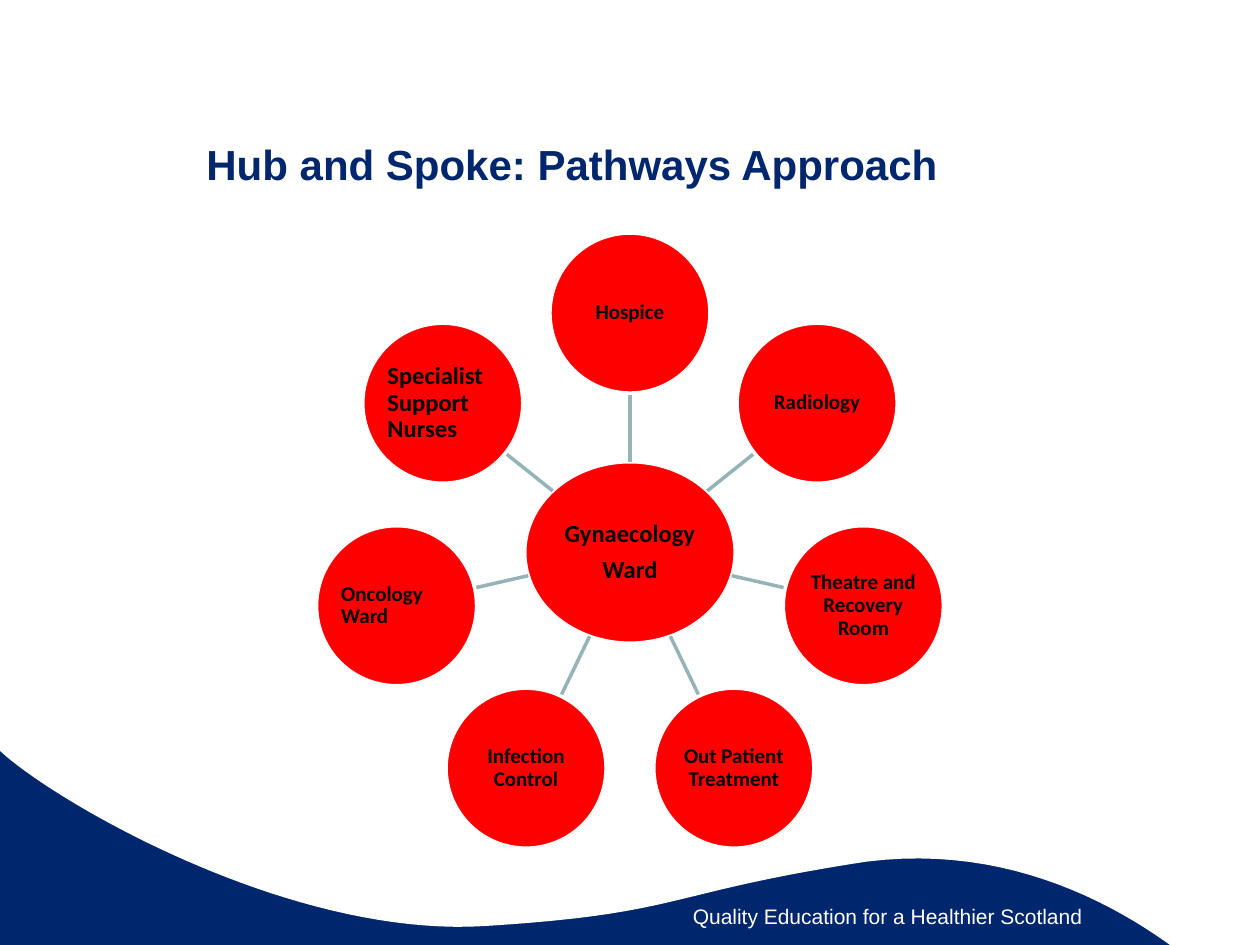
from dataclasses import dataclass
from math import cos, hypot, pi, sin

from lxml import etree
from pptx import Presentation, util as u
from pptx.dml.color import RGBColor
from pptx.enum import shapes, text
from pptx.oxml.ns import qn

TITLE = "Hub and Spoke: Pathways Approach"
MOTTO = "Quality Education for a Healthier Scotland"
HUB = ["Gynaecology", "Ward"]
LEFT, MID = text.PP_ALIGN.LEFT, text.PP_ALIGN.CENTER
SPOKES = [
    ("Hospice", 12, MID),
    ("Radiology", 12, MID),
    ("Theatre and Recovery Room", 12, MID),
    ("Out Patient Treatment", 12, MID),
    ("Infection Control", 12, MID),
    ("Oncology Ward", 12, LEFT),
    ("Specialist Support Nurses", 14, LEFT),
]
WAVE = [
    [(-0.1, 59.5), (3.7, 63.2), (22.6, 74.5), (38.5, 73.5)],
    [(38.5, 73.5), (54.4, 72.5), (52.5, 70.9), (68.7, 68.4)],
    [(68.7, 68.4), (88.1, 65.9), (100.2, 82), (100.5, 81.8)],
]
EDGE = [(101, -0.1), (-0.2, -0.2)]


@dataclass
class Theme:
    navy: str = "00266D"
    white: str = "FFFFFF"
    red: str = "FF0000"
    black: str = "000000"
    grey: str = "96B3B6"
    head: str = "Arial"
    body: str = "Calibri"
    title: int = 24
    hub: int = 14
    motto: int = 12
    line: int = 2


T = Theme()
COLS, ROWS = 100, 75
CX, CY = 50, 43.85
RING, DISC = 19, 6.35
HUB_X, HUB_Y = 8.35, 7.2

deck = Presentation()
deck.slide_width, deck.slide_height = u.Inches(10), u.Inches(7.5)
UNIT = deck.slide_width / COLS
slide = deck.slides.add_slide(deck.slide_layouts[6])


def grid(*vals):
    return [round(v * UNIT) for v in vals]


def paint(fill, tone):
    fill.solid()
    fill.fore_color.rgb = RGBColor.from_string(tone)


def stroke(line, tone):
    paint(line.fill, tone)
    line.width = u.Pt(T.line)


def write(frame, lines, size, font, tone, align, bold=True, wrap=True):
    frame.word_wrap = wrap
    frame.vertical_anchor = text.MSO_ANCHOR.MIDDLE
    for i, line in enumerate(lines):
        para = frame.paragraphs[0] if i == 0 else frame.add_paragraph()
        para.alignment = align
        run = para.add_run()
        run.text = line
        run.font.size, run.font.name, run.font.bold = u.Pt(size), font, bold
        run.font.color.rgb = RGBColor.from_string(tone)


def label(box, *args, **opts):
    write(slide.shapes.add_textbox(*grid(*box)).text_frame, *args, **opts)


def disc(x, y, rx, ry, lines, size, align):
    oval = slide.shapes.add_shape(
        shapes.MSO_SHAPE.OVAL, *grid(x - rx, y - ry, 2 * rx, 2 * ry))
    oval.shadow.inherit = False
    paint(oval.fill, T.red)
    stroke(oval.line, T.white)
    frame = oval.text_frame
    frame.margin_left = frame.margin_right = u.Inches(0.01)
    frame.margin_top = frame.margin_bottom = u.Inches(0.01)
    write(frame, lines, size, T.body, T.black, align)
    for para in frame.paragraphs:
        para.line_spacing = 0.9
        para.space_after = u.Pt(round(size * 0.35))


def link(x1, y1, x2, y2):
    line = slide.shapes.add_connector(
        shapes.MSO_CONNECTOR.STRAIGHT, *grid(x1, y1, x2, y2))
    stroke(line.line, T.grey)
    etree.SubElement(line._element.spPr, qn("a:effectLst"))


def curve(a, b, c, d, steps=40):
    for i in range(steps + 1):
        t = i / steps
        s = 1 - t
        yield tuple(s**3 * p + 3 * s * s * t * q + 3 * s * t * t * r + t**3 * v
                    for p, q, r, v in zip(a, b, c, d))


paint(slide.background.fill, T.navy)
dots = EDGE + [dot for arc in WAVE for dot in curve(*arc)]
pen = slide.shapes.build_freeform(*grid(*dots[0]))
pen.add_line_segments([grid(*dot) for dot in dots[1:]], close=True)
sheet = pen.convert_to_shape()
sheet.shadow.inherit = False
paint(sheet.fill, T.white)
sheet.line.fill.background()

label((54, 71.2, 33.8, 3), [MOTTO], T.motto, T.head, T.white, LEFT,
      bold=False, wrap=False)
label((7.5, 6.7, 75.8, 12.5), [TITLE], T.title, T.head, T.navy, MID)

disc(CX, CY, HUB_X, HUB_Y, HUB, T.hub, MID)
for i, (name, size, align) in enumerate(SPOKES):
    turn = 2 * pi * i / len(SPOKES)
    dx, dy = sin(turn), -cos(turn)
    near, far = 1 / hypot(dx / HUB_X, dy / HUB_Y), RING - DISC
    link(CX + near * dx, CY + near * dy, CX + far * dx, CY + far * dy)
    disc(CX + RING * dx, CY + RING * dy, DISC, DISC, [name], size, align)

deck.save("out.pptx")
